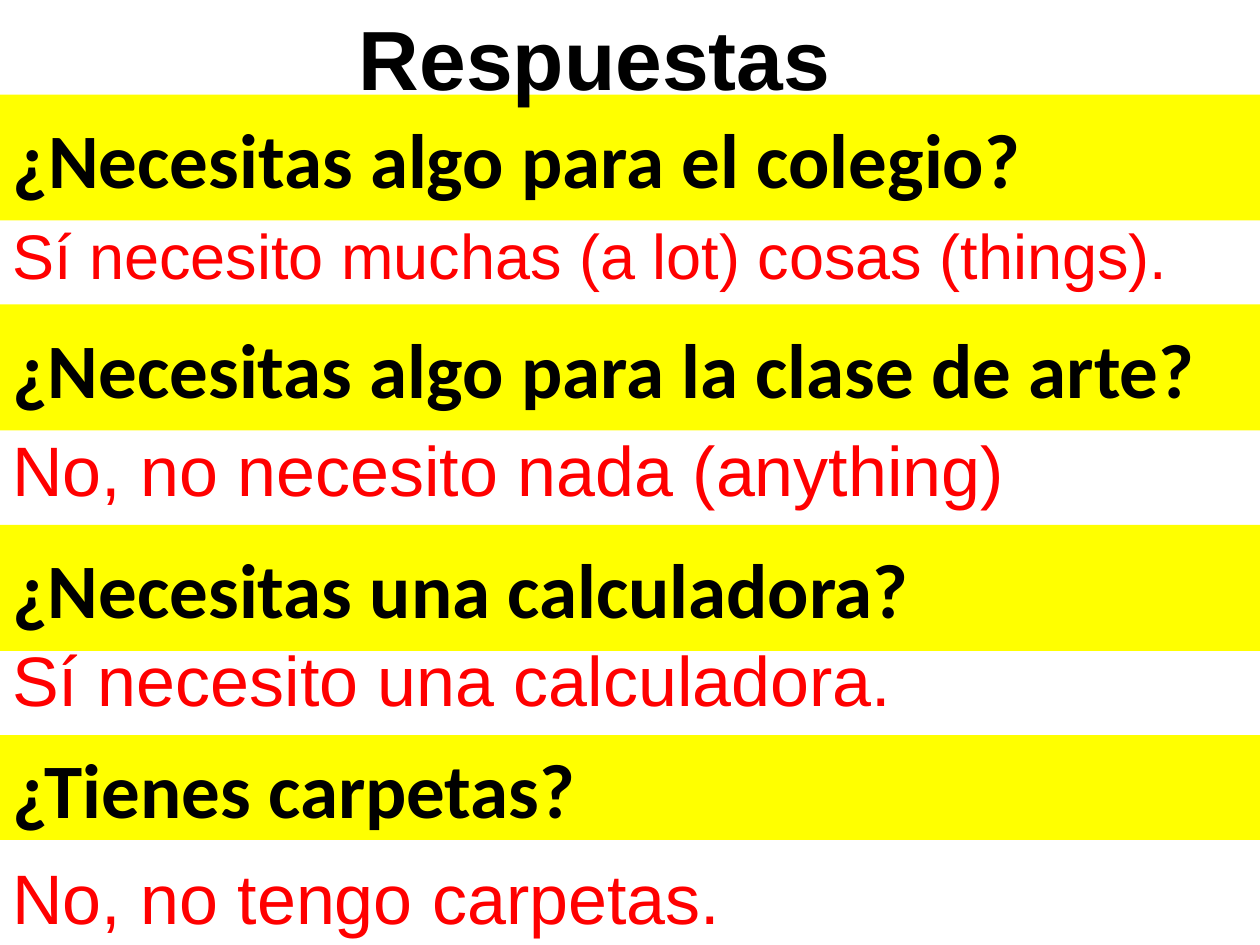
from pptx import Presentation
from pptx.dml.color import RGBColor
from pptx.enum.shapes import MSO_SHAPE
from pptx.enum.text import MSO_ANCHOR, MSO_AUTO_SIZE, PP_ALIGN
from pptx.util import Inches, Pt

COLOURS = {"band": "FFFF00", "question": "000000", "answer": "FF0000"}
WIDTH, HEIGHT = Inches(10), Inches(7.5)
ROW = HEIGHT / 90  # the slide is divided into 90 rows

QUESTION = {"name": "Calibri", "size": Pt(44), "bold": True}
ANSWER = {"name": "Arial", "size": Pt(40), "bold": False}
LONG_ANSWER = {**ANSWER, "size": Pt(36)}
HEADING = {"name": "Arial", "size": Pt(48), "bold": True}

# question, band row, band rows, answer, answer row, answer rows, answer format
EXCHANGES = [
    ("¿Necesitas algo para el colegio?", 9, 12,
     "Sí necesito muchas (a lot) cosas (things).", 20, 8.5, LONG_ANSWER),
    ("¿Necesitas algo para la clase de arte?", 29, 12,
     "No, no necesito nada (anything)", 40, 9.25, ANSWER),
    ("¿Necesitas una calculadora?", 50, 12,
     "Sí necesito una calculadora.", 60, 9.25, ANSWER),
    ("¿Tienes carpetas?", 70, 10,
     "No, no tengo carpetas.", 80.75, 9.25, ANSWER),
]


def colour(name):
    return RGBColor.from_string(COLOURS[name])


def place(shape, row, rows, left=0, width=1):
    """Position by grid rows and by shares of the slide width."""
    shape.left, shape.width = round(left * WIDTH), round(width * WIDTH)
    shape.top, shape.height = round(row * ROW), round(rows * ROW)


def write(shape, text, font_format, colour_name, anchor, wrap=True):
    frame = shape.text_frame
    frame.word_wrap = wrap
    frame.vertical_anchor = anchor
    para = frame.paragraphs[0]
    para.alignment = PP_ALIGN.LEFT
    span = para.add_run()
    span.text = text
    for key, value in font_format.items():
        setattr(span.font, key, value)
    span.font.color.rgb = colour(colour_name)


def format_band(shape, text, row, rows):
    place(shape, row, rows)
    shape.fill.solid()
    shape.fill.fore_color.rgb = colour("band")
    shape.line.fill.background()
    write(shape, text, QUESTION, "question", MSO_ANCHOR.MIDDLE)
    shape.text_frame.auto_size = MSO_AUTO_SIZE.NONE


def add_band(page, text, row, rows):
    band = page.shapes.add_shape(MSO_SHAPE.RECTANGLE, 0, 0, WIDTH, Inches(1))
    band.shadow.inherit = False
    format_band(band, text, row, rows)


def add_text(page, text, row, rows, font_format, colour_name,
             left=0, width=1, wrap=True):
    box = page.shapes.add_textbox(0, 0, WIDTH, Inches(1))
    place(box, row, rows, left, width)
    write(box, text, font_format, colour_name, MSO_ANCHOR.TOP, wrap)
    box.text_frame.auto_size = MSO_AUTO_SIZE.SHAPE_TO_FIT_TEXT


def main():
    deck = Presentation()
    deck.slide_width, deck.slide_height = WIDTH, HEIGHT
    page = deck.slides.add_slide(deck.slide_layouts[5])

    # Questions on bands, each followed by its answer; the first is the title
    for index, exchange in enumerate(EXCHANGES):
        question, band_row, band_rows, answer, row, rows, style = exchange
        if index == 0:
            format_band(page.shapes.title, question, band_row, band_rows)
        else:
            add_band(page, question, band_row, band_rows)
        add_text(page, answer, row, rows, style, "answer")

    # Heading above the first band
    add_text(page, "Respuestas", 0, 10.9, HEADING, "question",
             left=0.275, width=0.4, wrap=False)
    deck.save("out.pptx")


if __name__ == "__main__":
    main()
